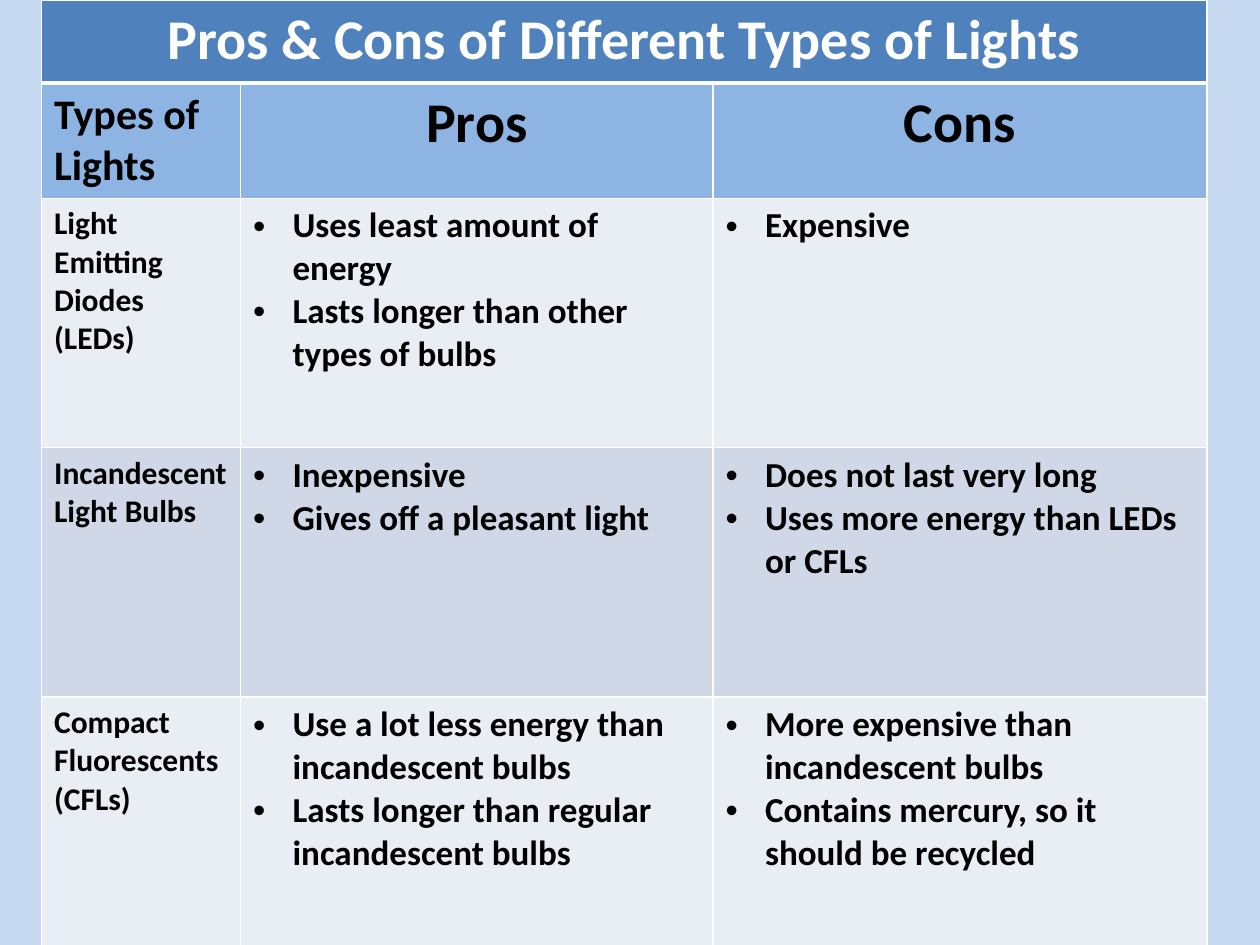
from dataclasses import dataclass

from lxml import etree
from pptx import Presentation
from pptx.dml.color import RGBColor
from pptx.enum.text import PP_ALIGN
from pptx.oxml.ns import qn
from pptx.util import Pt

LEFT, CENTER = PP_ALIGN.LEFT, PP_ALIGN.CENTER
BLANK = 6


@dataclass(frozen=True)
class Theme:
    font: str = "Calibri"
    back: str = "C6D9F1"
    title: str = "4F81BD"
    head: str = "8EB4E3"
    bands: tuple = ("E9EDF4", "D0D8E8")
    white: str = "FFFFFF"
    black: str = "000000"
    big: int = 32
    label: int = 24
    point: int = 20
    name: int = 18
    thin: int = 1
    thick: int = 3
    indent: float = 22.5


@dataclass(frozen=True)
class Light:
    name: str
    pros: tuple
    cons: tuple


THEME = Theme()
TITLE = "Pros & Cons of Different Types of Lights"
LIGHTS = (
    Light("Light Emitting Diodes (LEDs)",
          ("Uses least amount of energy",
           "Lasts longer than other types of bulbs"),
          ("Expensive",)),
    Light("Incandescent Light Bulbs",
          ("Inexpensive", "Gives off a pleasant light"),
          ("Does not last very long",
           "Uses more energy than LEDs or CFLs")),
    Light("Compact Fluorescents (CFLs)",
          ("Use a lot less energy than incandescent bulbs",
           "Lasts longer than regular incandescent bulbs"),
          ("More expensive than incandescent bulbs",
           "Contains mercury, so it should be recycled")),
)
X, Y = 23.76, 0
COLS = (113.76, 270, 282.24)
ROWS = (47.52, 64.08) + (142.56,) * len(LIGHTS)


def add_bullet(para) -> None:
    props = para._p.get_or_add_pPr()
    gap = Pt(THEME.indent)
    props.set("marL", str(gap))
    props.set("indent", str(-gap))
    etree.SubElement(props, qn("a:buFont"), typeface="Arial")
    etree.SubElement(props, qn("a:buChar"), char="•")


def write(cell, *lines: str, size: int, color: str = THEME.black,
          align=LEFT, bullet: bool = False) -> None:
    frame = cell.text_frame
    for i, line in enumerate(lines):
        para = frame.add_paragraph() if i else frame.paragraphs[0]
        para.alignment = align
        if bullet:
            add_bullet(para)
        run = para.add_run()
        run.text = line
        font = run.font
        font.name, font.size, font.bold = THEME.font, Pt(size), True
        font.color.rgb = RGBColor.from_string(color)


def paint(cell, fill: str, top: int, base: int) -> None:
    cell.fill.solid()
    cell.fill.fore_color.rgb = RGBColor.from_string(fill)
    # Borders come before the fill in the cell properties
    props = cell._tc.get_or_add_tcPr()
    sides = (("L", THEME.thin), ("R", THEME.thin), ("T", top), ("B", base))
    for i, (side, width) in enumerate(sides):
        line = etree.Element(qn(f"a:ln{side}"), w=str(Pt(width)))
        solid = etree.SubElement(line, qn("a:solidFill"))
        etree.SubElement(solid, qn("a:srgbClr"), val=THEME.white)
        props.insert(i, line)


def make_grid(slide):
    frame = slide.shapes.add_table(len(ROWS), len(COLS), Pt(X), Pt(Y),
                                   Pt(sum(COLS)), Pt(sum(ROWS)))
    grid = frame.table
    for col, width in zip(grid.columns, COLS):
        col.width = Pt(width)
    for row, height in zip(grid.rows, ROWS):
        row.height = Pt(height)

    # Fills and borders, with a thick rule below the title
    bands = [THEME.bands[i % 2] for i in range(len(LIGHTS))]
    for r, fill in enumerate([THEME.title, THEME.head] + bands):
        top = THEME.thick if r == 1 else THEME.thin
        base = THEME.thick if r == 0 else THEME.thin
        for cell in grid.rows[r].cells:
            paint(cell, fill, top, base)
    return grid


def fill_grid(grid) -> None:
    # Title row
    grid.cell(0, 0).merge(grid.cell(0, len(COLS) - 1))
    write(grid.cell(0, 0), TITLE, size=THEME.big, color=THEME.white,
          align=CENTER)

    # Column heads
    write(grid.cell(1, 0), "Types of Lights", size=THEME.label)
    for c, head in enumerate(("Pros", "Cons"), 1):
        write(grid.cell(1, c), head, size=THEME.big, align=CENTER)

    # One row for each kind of light
    for r, light in enumerate(LIGHTS, 2):
        write(grid.cell(r, 0), light.name, size=THEME.name)
        for c, points in enumerate((light.pros, light.cons), 1):
            write(grid.cell(r, c), *points, size=THEME.point, bullet=True)


def main() -> None:
    deck = Presentation()
    deck.slide_width, deck.slide_height = Pt(720), Pt(540)
    slide = deck.slides.add_slide(deck.slide_layouts[BLANK])
    back = slide.background.fill
    back.solid()
    back.fore_color.rgb = RGBColor.from_string(THEME.back)
    fill_grid(make_grid(slide))
    deck.save("out.pptx")


if __name__ == "__main__":
    main()
